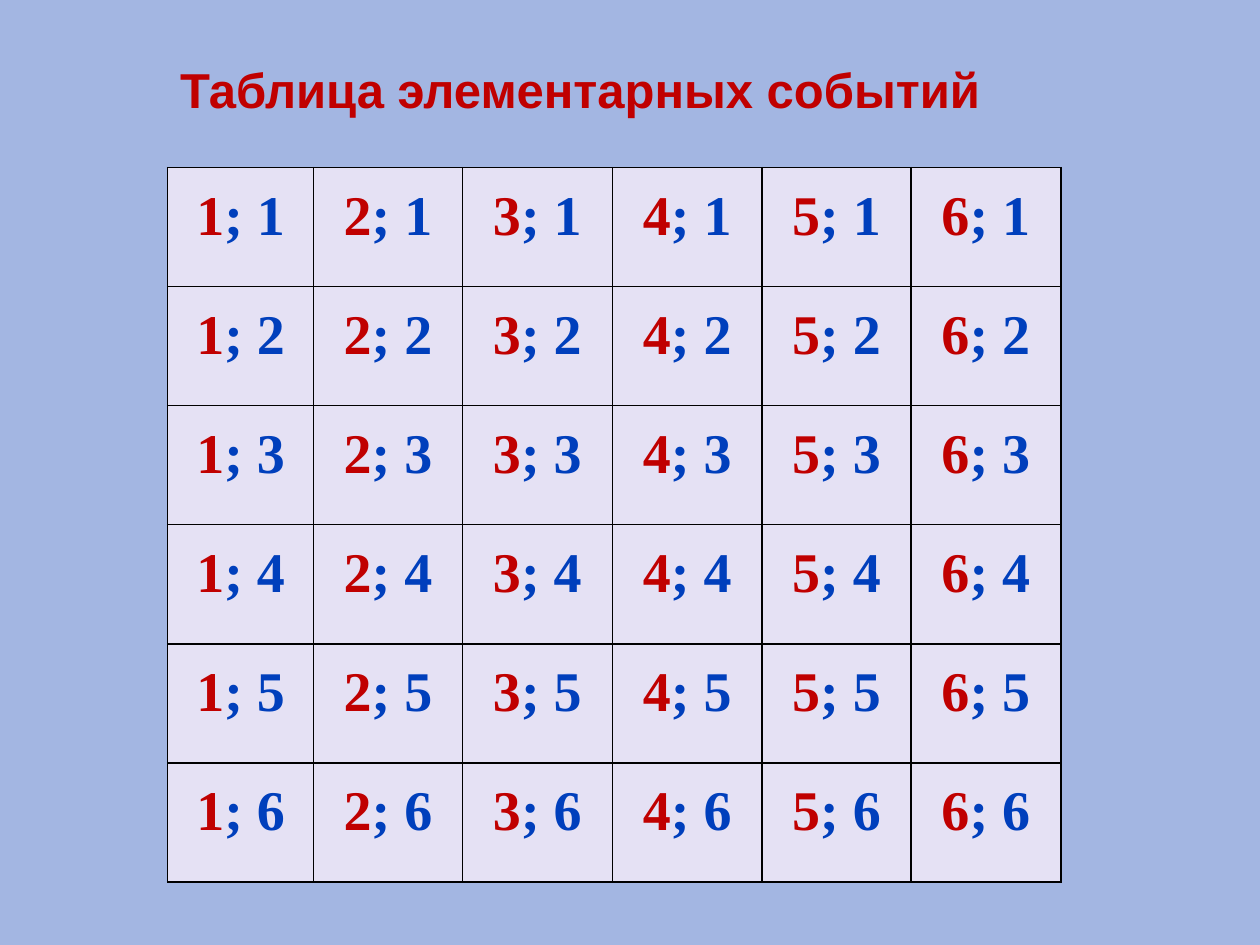
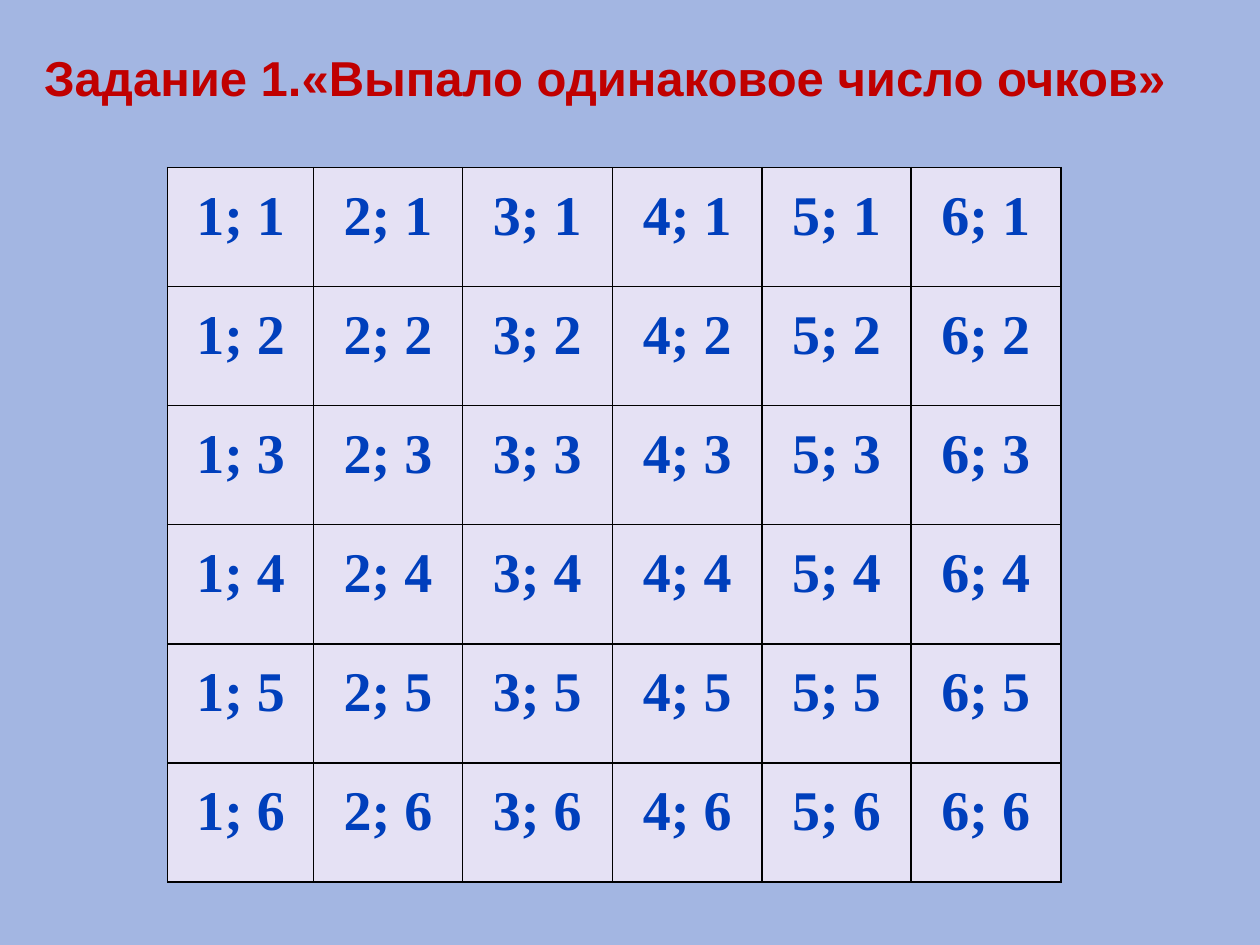
from pptx import Presentation
from pptx import util as u
from pptx.dml.color import RGBColor
from pptx.enum import text
from pptx.oxml import parse_xml
from pptx.oxml.ns import nsdecls

BACKGROUND, CELL, RED, BLUE, BLACK = "A3B6E2", "E5E1F4", "C00000", "003FBC", "000000"
TITLE_FONT = {"name": "Arial", "size": u.Pt(28), "bold": True}
CELL_FONT = {"name": "Times New Roman", "size": u.Pt(32), "bold": True}
CELL_PARAGRAPH = {"alignment": text.PP_ALIGN.CENTER, "line_spacing": 1.15, "space_after": u.Pt(6)}
TITLE_FRAME = {"word_wrap": False, "auto_size": text.MSO_AUTO_SIZE.SHAPE_TO_FIT_TEXT,
               "vertical_anchor": text.MSO_ANCHOR.TOP}
MARGINS = {f"margin_{side}": u.Inches(0.07) for side in ("left", "right", "top", "bottom")}
TABLE_BOX = (1.33, 1.33, 7.08, 5.67)
COLUMNS = (1.16, 1.18, 1.19, 1.19, 1.18, 1.19)
FACES = range(1, 7)


def apply(obj, values):
    """Set every attribute in a dict of format values."""
    for name, value in values.items():
        setattr(obj, name, value)


def paint(fill, color):
    """Give a fill one solid colour."""
    fill.solid()
    fill.fore_color.rgb = RGBColor.from_string(color)


def add_run(p, content, font, color):
    """Append a formatted run to a paragraph."""
    r = p.add_run()
    r.text = content
    apply(r.font, font)
    r.font.color.rgb = RGBColor.from_string(color)


def add_borders(cell):
    """Draw a thin black line on all four sides of a cell."""
    tc_pr = cell._tc.get_or_add_tcPr()
    for i, side in enumerate("LRTB"):
        tc_pr.insert(i, parse_xml(
            f'<a:ln{side} {nsdecls("a")} w="{u.Pt(1)}"><a:solidFill>'
            f'<a:srgbClr val="{BLACK}"/></a:solidFill></a:ln{side}>'))


def add_title(s, content, box):
    """Place the red heading in the title placeholder."""
    sp = s.shapes.title
    apply(sp, dict(zip(("left", "top", "width", "height"), map(u.Inches, box))))
    tf = sp.text_frame
    apply(tf, TITLE_FRAME)
    p = tf.paragraphs[0]
    p.alignment = text.PP_ALIGN.LEFT
    add_run(p, content, TITLE_FONT, RED)


def add_outcomes(s, box, first_color):
    """Add the table of all outcomes of two dice."""
    table = s.shapes.add_table(len(FACES), len(FACES), *map(u.Inches, box)).table
    apply(table, {"first_row": False, "horz_banding": False})
    for column, width in zip(table.columns, COLUMNS):
        column.width = u.Inches(width)
    for row, second in zip(table.rows, FACES):
        row.height = u.Inches(box[3] / len(FACES))
        for cell, first in zip(row.cells, FACES):
            apply(cell, MARGINS)
            paint(cell.fill, CELL)
            add_borders(cell)
            p = cell.text_frame.paragraphs[0]
            apply(p, CELL_PARAGRAPH)
            if first_color == BLUE:
                add_run(p, f"{first}; {second}", CELL_FONT, BLUE)
            else:
                add_run(p, str(first), CELL_FONT, first_color)
                add_run(p, f"; {second}", CELL_FONT, BLUE)


def add_outcome_slide(prs, title, title_box, first_color):
    """Build a slide with a heading over the outcome table."""
    s = prs.slides.add_slide(prs.slide_layouts.get_by_name("Title Only"))
    add_outcomes(s, TABLE_BOX, first_color)
    add_title(s, title, title_box)


def main():
    """Build and save the presentation."""
    prs = Presentation()
    apply(prs, {"slide_width": u.Inches(10), "slide_height": u.Inches(7.5)})
    paint(prs.slide_master.background.fill, BACKGROUND)
    add_outcome_slide(prs, "Таблица элементарных событий", (1.33, 0.42, 6.73, 0.57), RED)
    add_outcome_slide(prs, "Задание 1.«Выпало одинаковое число очков»", (0.25, 0.33, 9.21, 0.57), BLUE)
    prs.save("out.pptx")


if __name__ == "__main__":
    main()
